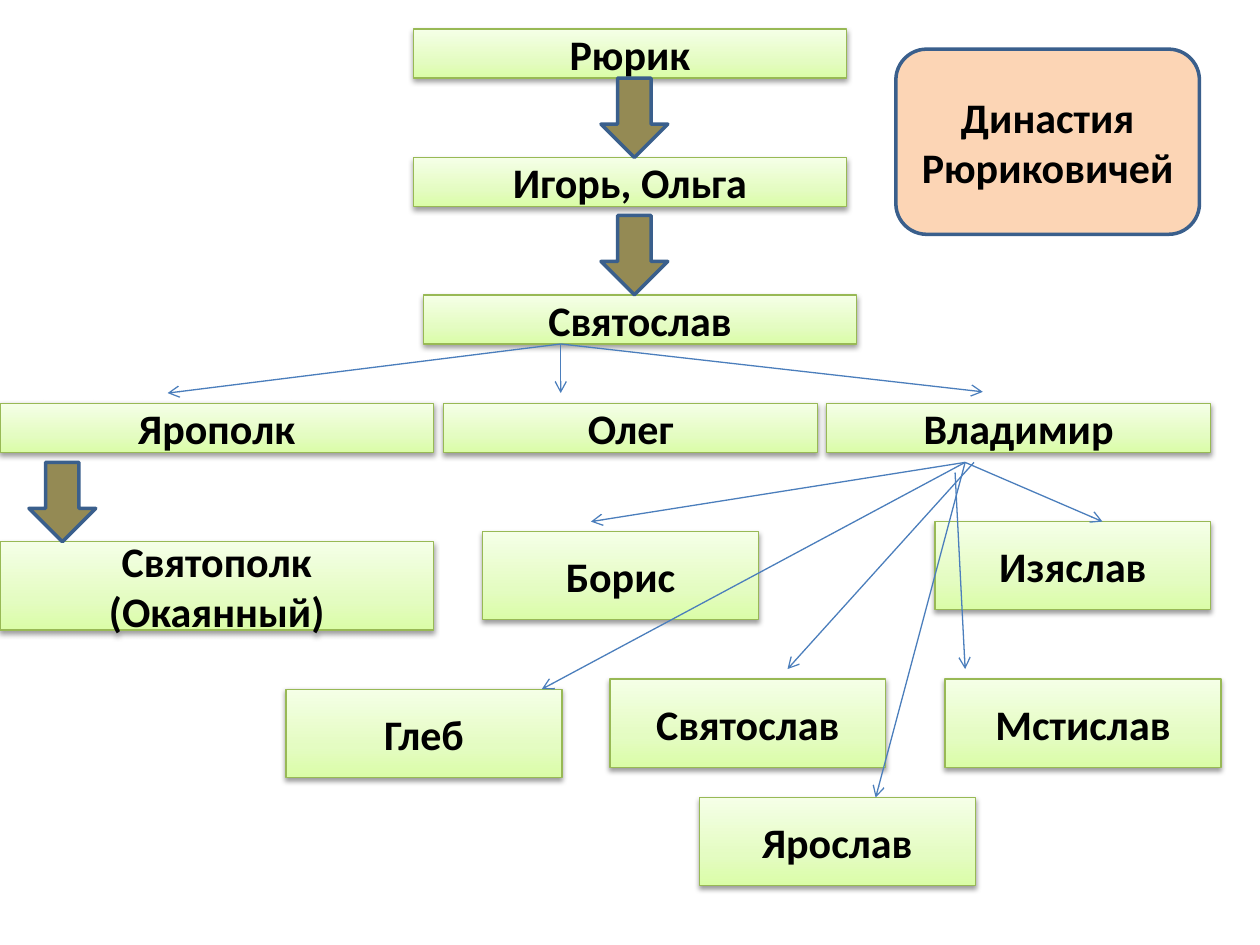
from collections import namedtuple

from lxml.etree import SubElement
from pptx import Presentation
from pptx.dml.color import RGBColor
from pptx.enum.shapes import MSO_CONNECTOR, MSO_SHAPE
from pptx.enum.text import MSO_ANCHOR, PP_ALIGN
from pptx.oxml.ns import qn
from pptx.util import Inches, Pt

BLACK = RGBColor(0x00, 0x00, 0x00)
PEACH = RGBColor(0xFC, 0xD5, 0xB5)
OLIVE = RGBColor(0x94, 0x8A, 0x54)
NAVY = RGBColor(0x3A, 0x5F, 0x8C)
BLUE = RGBColor(0x4B, 0x7E, 0xBC)
GREEN = RGBColor(0x98, 0xB9, 0x55)
GREEN_STOPS = (
    (0, RGBColor(0xDA, 0xFD, 0xA7)),
    (35, RGBColor(0xE4, 0xFC, 0xC2)),
    (100, RGBColor(0xF5, 0xFF, 0xE7)),
)
ROW_HEIGHT = 0.39
RULER_WIDTH = 3.44
CARD_WIDTH, CARD_HEIGHT = 2.19, 0.7
ARROW_WIDTH, ARROW_HEIGHT = 0.53, 0.63

Box = namedtuple("Box", "left top width height")


def add_shape(slide, kind, box, line_color, line_width):
    """Add an outlined shape without a shadow."""
    shape = slide.shapes.add_shape(kind, *map(Inches, box))
    shape.line.color.rgb = line_color
    shape.line.width = Pt(line_width)
    shape.shadow.inherit = False
    return shape


def add_label(shape, text):
    """Write a bold centred label in a shape."""
    frame = shape.text_frame
    frame.word_wrap = True
    frame.vertical_anchor = MSO_ANCHOR.MIDDLE
    paragraph = frame.paragraphs[0]
    paragraph.alignment = PP_ALIGN.CENTER
    run = paragraph.add_run()
    run.text = text
    run.font.name = "Calibri"
    run.font.size = Pt(24)
    run.font.bold = True
    run.font.color.rgb = BLACK


def add_color(parent, color):
    """Append an RGB colour element and return it."""
    return SubElement(parent, qn("a:srgbClr"), val=str(color))


def add_person(slide, name, box):
    """Add a green gradient box with a soft shadow and a name."""
    shape = add_shape(slide, MSO_SHAPE.RECTANGLE, box, GREEN, 0.75)
    shape.fill.gradient()
    shape.fill.gradient_angle = 90
    properties = shape._element.spPr
    stops = properties.find(".//" + qn("a:gsLst"))
    for stop in list(stops):
        stops.remove(stop)
    for position, color in GREEN_STOPS:
        add_color(SubElement(stops, qn("a:gs"), pos=str(position * 1000)), color)
    shadow = SubElement(
        properties.find(qn("a:effectLst")), qn("a:outerShdw"),
        blurRad=str(Pt(3.1)), dist=str(Pt(1.6)), dir="5400000", rotWithShape="0",
    )
    SubElement(add_color(shadow, BLACK), qn("a:alpha"), val="38000")
    add_label(shape, name)


def add_block_arrow(slide, left, tip):
    """Add a block arrow whose point ends at the given height."""
    box = Box(left, tip - ARROW_HEIGHT, ARROW_WIDTH, ARROW_HEIGHT)
    shape = add_shape(slide, MSO_SHAPE.DOWN_ARROW, box, NAVY, 2)
    shape.fill.solid()
    shape.fill.fore_color.rgb = OLIVE


def add_thin_arrow(slide, box, start, end):
    """Add a thin arrow between two points measured from the box corner."""
    points = [Inches(box[axis] + point[axis]) for point in (start, end) for axis in (0, 1)]
    connector = slide.shapes.add_connector(MSO_CONNECTOR.STRAIGHT, *points)
    connector.line.color.rgb = BLUE
    connector.line.width = Pt(0.75)
    SubElement(connector.line._get_or_add_ln(), qn("a:tailEnd"), type="arrow")
    SubElement(connector._element.spPr, qn("a:effectLst"))


def add_first_rulers(slide, box):
    """Stack the first three generations, joined by block arrows."""
    generations = (("Рюрик", 0, 0), ("Игорь, Ольга", 0, 1.02), ("Святослав", 0.08, 2.11))
    for name, x, y in generations:
        add_person(slide, name, Box(box.left + x, box.top + y, RULER_WIDTH, ROW_HEIGHT))
    for _, _, y in generations[1:]:
        add_block_arrow(slide, box.left + 1.49, box.top + y)


def add_brothers(slide, box):
    """Place three brothers along the bottom of the box, under a fan of arrows."""
    brothers = (
        ("Ярополк", 0, RULER_WIDTH, (1.33, 0.39)),
        ("Олег", 3.52, 2.97, (4.45, 0.39)),
        ("Владимир", 6.56, 3.05, (7.8, 0.38)),
    )
    row_top = box.top + box.height - ROW_HEIGHT
    for name, x, width, tip in brothers:
        add_person(slide, name, Box(box.left + x, row_top, width, ROW_HEIGHT))
        add_thin_arrow(slide, box, (4.45, 0), tip)


def add_yaropolk_heir(slide, box):
    """Place the heir at the bottom of the box, under a block arrow."""
    top = box.top + box.height - CARD_HEIGHT
    add_person(slide, "Святополк (Окаянный)", Box(box.left, top, box.width, CARD_HEIGHT))
    add_block_arrow(slide, box.left + 0.23, top)


def add_vladimir_sons(slide, box):
    """Scatter the sons' cards and draw an arrow towards each."""
    origin = (5.39, 0)
    sons = (
        ("Борис", 1.56, 0.55, origin, (2.42, 0.47)),
        ("Святослав", 2.57, 1.72, (5.46, 0), (3.98, 1.64)),
        ("Ярослав", 3.28, 2.66, origin, (4.68, 2.66)),
        ("Глеб", 0, 1.8, origin, (2.03, 1.8)),
        ("Изяслав", 5.15, 0.47, origin, (6.48, 0.47)),
        ("Мстислав", 5.23, 1.72, (5.31, 0.08), (5.39, 1.64)),
    )
    for name, x, y, _, _ in sons:
        add_person(slide, name, Box(box.left + x, box.top + y, CARD_WIDTH, CARD_HEIGHT))
    for _, _, _, start, tip in sons:
        add_thin_arrow(slide, box, start, tip)


def add_title(slide, box):
    """Fill the box with the rounded title panel."""
    shape = add_shape(slide, MSO_SHAPE.ROUNDED_RECTANGLE, box, NAVY, 2)
    shape.fill.solid()
    shape.fill.fore_color.rgb = PEACH
    add_label(shape, "Династия Рюриковичей")


def main():
    """Build the family tree slide and save it."""
    presentation = Presentation()
    presentation.slide_width = Inches(10)
    presentation.slide_height = Inches(7.5)
    slide = presentation.slides.add_slide(presentation.slide_layouts[6])
    add_first_rulers(slide, Box(3.28, 0.23, 3.52, 2.5))
    add_brothers(slide, Box(0, 2.73, 9.61, 0.86))
    add_title(slide, Box(7.11, 0.39, 2.41, 1.47))
    add_yaropolk_heir(slide, Box(0, 3.67, RULER_WIDTH, 1.33))
    add_vladimir_sons(slide, Box(2.27, 3.67, 7.42, 3.36))
    presentation.save("out.pptx")


if __name__ == "__main__":
    main()
